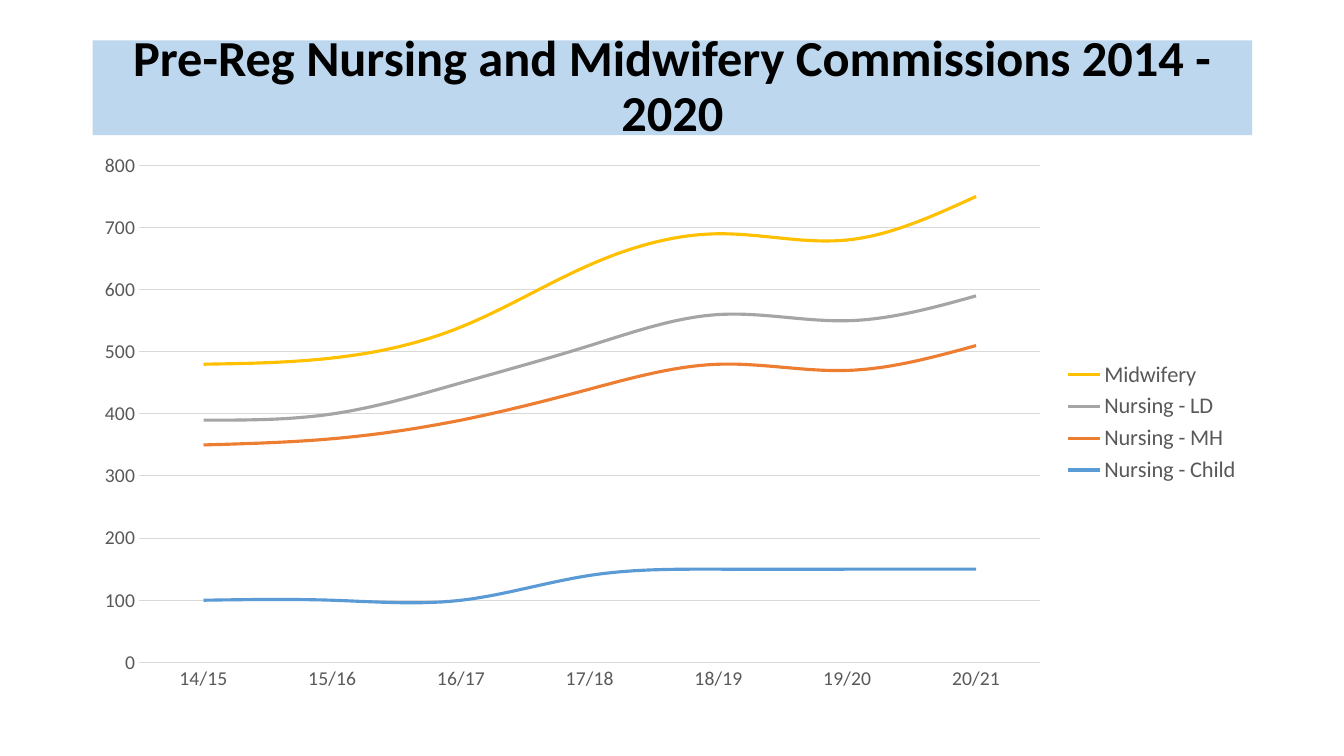
from lxml import etree
from pptx import Presentation, util as u
from pptx.chart.data import CategoryChartData
from pptx.dml.color import RGBColor
from pptx.enum import chart as ch, shapes, text
from pptx.oxml.ns import qn

THEME = {
    "font": "Calibri", "title_size": 36, "axis_size": 14, "legend_size": 16,
    "band": "BDD7EE", "title": "000000", "label": "595959", "grid": "D9D9D9",
    "paper": "FFFFFF",
}
YEARS = ["14/15", "15/16", "16/17", "17/18", "18/19", "19/20", "20/21"]
COMMISSIONS = {
    "Nursing - Child": ("5B9BD5", [100, 100, 100, 140, 150, 150, 150]),
    "Nursing - MH": ("ED7D31", [250, 260, 290, 300, 330, 320, 360]),
    "Nursing - LD": ("A5A5A5", [40, 40, 60, 70, 80, 80, 80]),
    "Midwifery": ("FFC000", [90, 90, 90, 130, 130, 130, 160]),
}
PLOT_SHARES = {"x": 0.05, "y": 0.04, "w": 0.77, "h": 0.89}


def style_font(font, size, color, bold=False):
    font.name, font.size, font.bold = THEME["font"], u.Pt(size), bold
    font.color.rgb = RGBColor.from_string(color)


def style_line(line, color, width):
    line.color.rgb = RGBColor.from_string(color)
    line.width = u.Pt(width)


deck = Presentation()
deck.slide_width, deck.slide_height = u.Inches(13.33), u.Inches(7.5)
slide = deck.slides.add_slide(deck.slide_layouts[6])

# Title band
band = slide.shapes.add_shape(shapes.MSO_SHAPE.RECTANGLE, u.Inches(0.92),
                              u.Inches(0.4), u.Inches(11.5), u.Inches(0.94))
band.shadow.inherit = False
band.fill.solid()
band.fill.fore_color.rgb = RGBColor.from_string(THEME["band"])
band.line.fill.background()
band.text_frame.word_wrap = True
band.text_frame.vertical_anchor = text.MSO_ANCHOR.MIDDLE
heading = band.text_frame.paragraphs[0]
heading.alignment = text.PP_ALIGN.CENTER
heading.line_spacing = 0.9
heading_run = heading.add_run()
heading_run.text = "Pre-Reg Nursing and Midwifery Commissions 2014 - 2020"
style_font(heading_run.font, THEME["title_size"], THEME["title"], bold=True)

# Stacked commissions by year
data = CategoryChartData()
data.categories = YEARS
for course, (_, places) in COMMISSIONS.items():
    data.add_series(course, places)
commissions = slide.shapes.add_chart(
    ch.XL_CHART_TYPE.LINE_STACKED, u.Inches(0.8), u.Inches(1.42),
    u.Inches(11.61), u.Inches(5.54), data).chart
commissions.has_title = False
style_font(commissions.font, THEME["axis_size"], THEME["label"])

plot = commissions.plots[0]
plot.vary_by_categories = False
for course in plot.series:
    course.smooth = True
    course.marker.style = ch.XL_MARKER_STYLE.NONE
    style_line(course.format.line, COMMISSIONS[course.name][0], 2.25)

years, places = commissions.category_axis, commissions.value_axis
for axis in (years, places):
    axis.major_tick_mark = axis.minor_tick_mark = ch.XL_TICK_MARK.NONE
    style_font(axis.tick_labels.font, THEME["axis_size"], THEME["label"])
style_line(years.format.line, THEME["grid"], 0.75)
places.format.line.fill.background()
places.minimum_scale, places.maximum_scale, places.major_unit = 0, 800, 100
places.has_major_gridlines = True
style_line(places.major_gridlines.format.line, THEME["grid"], 0.75)

commissions.has_legend = True
commissions.legend.position = ch.XL_LEGEND_POSITION.RIGHT
commissions.legend.include_in_layout = False
style_font(commissions.legend.font, THEME["legend_size"], THEME["label"])

# Plot area as shares of the chart
plot_area = commissions.element.find(".//" + qn("c:plotArea"))
layout = plot_area.find(qn("c:layout"))
if layout is None:
    layout = etree.Element(qn("c:layout"))
    plot_area.insert(0, layout)
manual = etree.SubElement(layout, qn("c:manualLayout"))
modes = {"layoutTarget": "inner", "xMode": "edge", "yMode": "edge"}
for tag, value in (modes | PLOT_SHARES).items():
    etree.SubElement(manual, qn("c:" + tag)).set("val", str(value))

# Chart background
backdrop = etree.Element(qn("c:spPr"))
paper = etree.SubElement(backdrop, qn("a:solidFill"))
etree.SubElement(paper, qn("a:srgbClr")).set("val", THEME["paper"])
etree.SubElement(etree.SubElement(backdrop, qn("a:ln")), qn("a:noFill"))
commissions.element.find(qn("c:chart")).addnext(backdrop)

deck.save("out.pptx")
